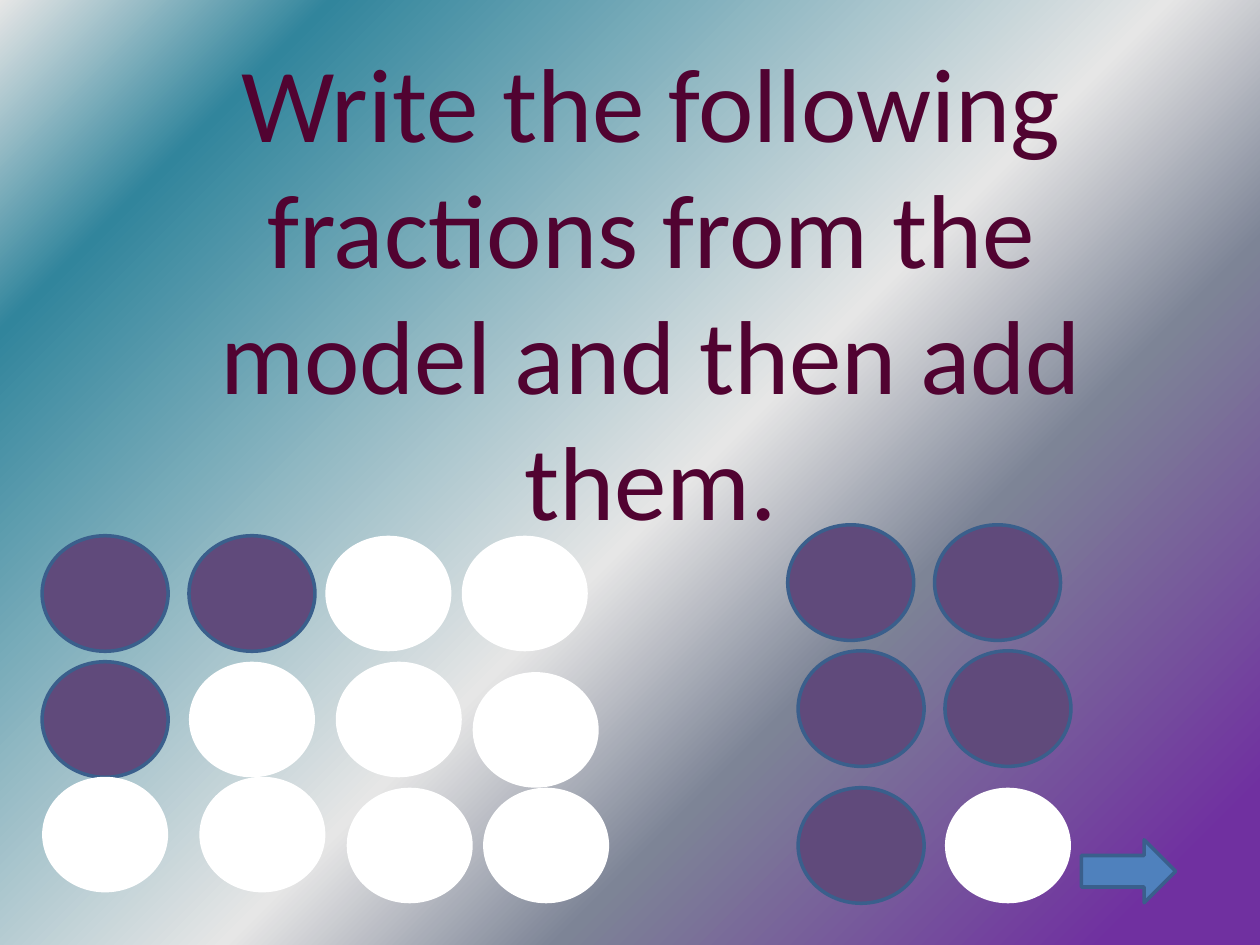
from pptx import Presentation
from pptx.dml.color import RGBColor
from pptx.enum.shapes import MSO_SHAPE
from pptx.enum.text import MSO_AUTO_SIZE, PP_ALIGN
from pptx.oxml import parse_xml
from pptx.oxml.ns import nsdecls
from pptx.util import Cm, Pt

PLUM = RGBColor(0x51, 0x03, 0x31)
PURPLE = RGBColor(0x60, 0x4A, 0x7B)
WHITE = RGBColor(0xFF, 0xFF, 0xFF)
BLUE = RGBColor(0x4F, 0x81, 0xBD)
OUTLINE = RGBColor(0x3A, 0x5F, 0x8C)
VIOLET = RGBColor(0x70, 0x30, 0xA0)
SLATE = RGBColor(0x7D, 0x84, 0x96)
SILVER = RGBColor(0xE6, 0xE6, 0xE6)
TEAL = RGBColor(0x31, 0x85, 0x9C)

QUESTION = "Write the following fractions from the model and then add them."
GRADIENT = [(0, VIOLET), (7, VIOLET), (32, SLATE), (47, SILVER), (85, TEAL), (100, SILVER)]

COUNTER_SIZE = (2.54, 2.33)
# SHADED_ROWS
MODELS = {
    "three twelfths": [
        (2, [(0.85, 10.8), (3.81, 10.8), (6.56, 10.8), (9.31, 10.8)]),
        (1, [(0.85, 13.34), (3.81, 13.34), (6.77, 13.34), (9.53, 13.55)]),
        (0, [(0.85, 15.66), (4.02, 15.66), (6.99, 15.88), (9.74, 15.88)]),
    ],
    "five sixths": [
        (2, [(15.88, 10.58), (18.84, 10.58)]),
        (2, [(16.09, 13.12), (19.05, 13.12)]),
        (1, [(16.09, 15.88), (19.05, 15.88)]),
    ],
}


def paint_background(slide):
    stops = "".join(
        f'<a:gs pos="{percent * 1000}"><a:srgbClr val="{color}"/></a:gs>'
        for percent, color in GRADIENT
    )
    background = parse_xml(
        f'<p:bg {nsdecls("p", "a")}><p:bgPr><a:gradFill rotWithShape="1">'
        f'<a:gsLst>{stops}</a:gsLst><a:path path="circle">'
        '<a:fillToRect l="100000" t="100000"/></a:path></a:gradFill>'
        '<a:effectLst/></p:bgPr></p:bg>'
    )
    slide.element.cSld.insert(0, background)


def add_figure(slide, kind, position, size, fill, outlined):
    figure = slide.shapes.add_shape(kind, *map(Cm, position + size))
    figure.shadow.inherit = False
    figure.fill.solid()
    figure.fill.fore_color.rgb = fill
    if outlined:
        figure.line.color.rgb = OUTLINE
        figure.line.width = Pt(2)
    else:
        figure.line.fill.background()


def add_question(slide):
    box = slide.shapes.add_textbox(Cm(3.6), Cm(0.64), Cm(19.05), Cm(10.52))
    frame = box.text_frame
    frame.word_wrap = True
    frame.auto_size = MSO_AUTO_SIZE.SHAPE_TO_FIT_TEXT
    frame.text = QUESTION
    para = frame.paragraphs[0]
    para.alignment = PP_ALIGN.CENTER
    font = para.runs[0].font
    font.name = "Calibri"
    font.size = Pt(60)
    font.color.rgb = PLUM


def main():
    deck = Presentation()
    deck.slide_width, deck.slide_height = Cm(25.4), Cm(19.05)
    slide = deck.slides.add_slide(deck.slide_layouts[6])
    paint_background(slide)
    add_question(slide)
    add_figure(slide, MSO_SHAPE.RIGHT_ARROW, (21.8, 16.93), (1.9, 1.27), BLUE, True)
    for rows in MODELS.values():
        for shaded_count, positions in rows:
            for index, position in enumerate(positions):
                shaded = index < shaded_count
                fill = PURPLE if shaded else WHITE
                add_figure(slide, MSO_SHAPE.OVAL, position, COUNTER_SIZE, fill, shaded)
    deck.save("out.pptx")


if __name__ == "__main__":
    main()
